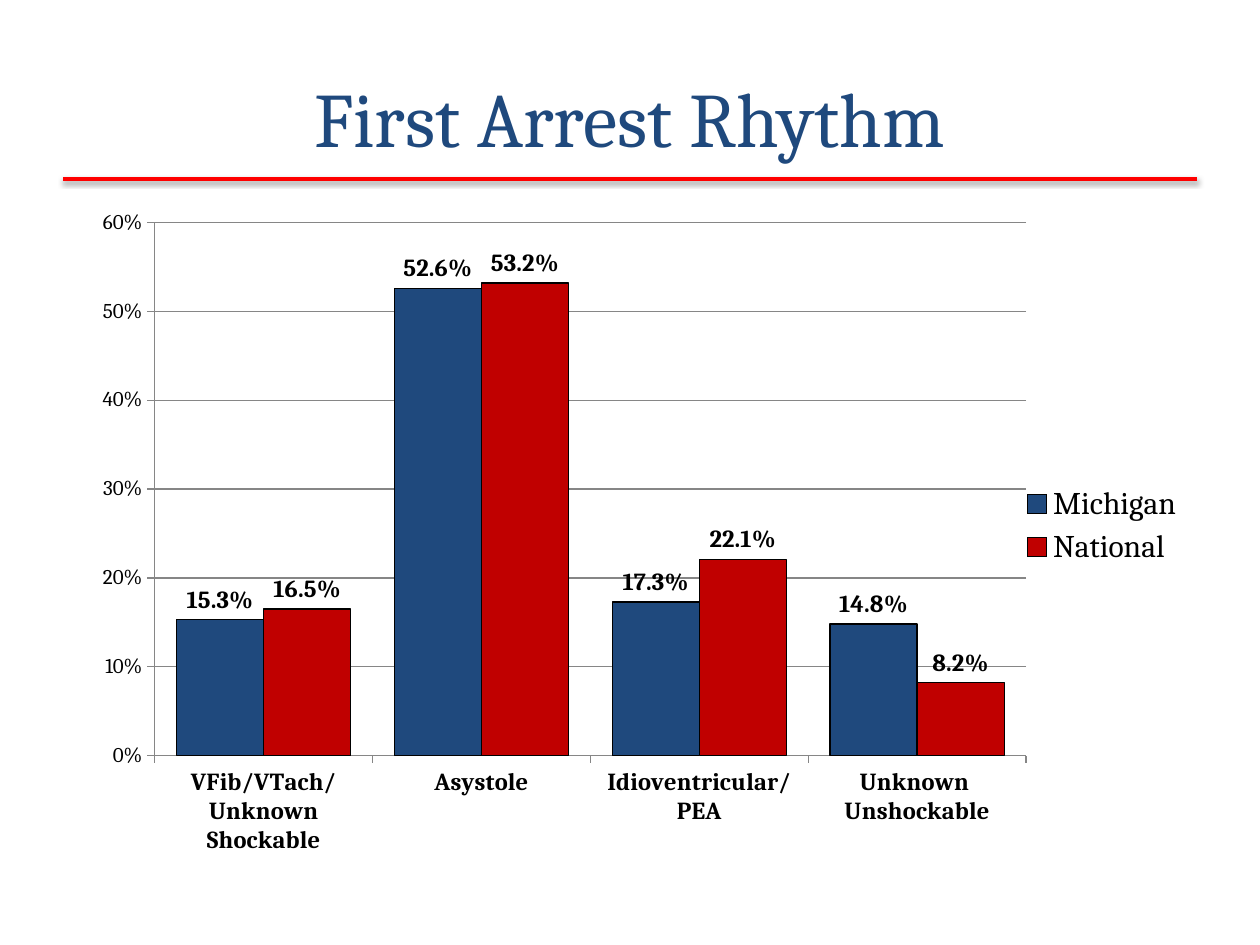
from dataclasses import dataclass

from pptx import Presentation
from pptx.chart.data import CategoryChartData
from pptx.dml.color import RGBColor
from pptx.enum.chart import XL_CHART_TYPE, XL_LABEL_POSITION, XL_LEGEND_POSITION, XL_TICK_MARK
from pptx.enum.shapes import MSO_CONNECTOR
from pptx.enum.text import MSO_ANCHOR, PP_ALIGN
from pptx.oxml import parse_xml
from pptx.oxml.ns import nsdecls, qn
from pptx.util import Pt


@dataclass(frozen=True)
class Theme:
    font: str = "Cambria"
    navy: RGBColor = RGBColor(0x1F, 0x49, 0x7D)
    crimson: RGBColor = RGBColor(0xC0, 0x00, 0x00)
    red: RGBColor = RGBColor(0xFF, 0x00, 0x00)
    black: RGBColor = RGBColor(0x00, 0x00, 0x00)
    gray: RGBColor = RGBColor(0x86, 0x86, 0x86)
    title_size: int = 44
    legend_size: int = 18
    label_size: int = 14
    scale_size: int = 12


THEME = Theme()
PIXELS_PER_INCH = 126
CATEGORIES = (
    "VFib/VTach/\nUnknown Shockable",
    "Asystole",
    "Idioventricular/\nPEA",
    "Unknown \nUnshockable",
)
SERIES = (
    ("Michigan", THEME.navy, (0.153, 0.526, 0.173, 0.148)),
    ("National", THEME.crimson, (0.165, 0.532, 0.221, 0.082)),
)
PLOT_AREA = {"x": 0.085, "y": 0.042, "w": 0.765, "h": 0.805}


def px(length):
    return round(length * 914400 / PIXELS_PER_INCH)


def set_font(font, size, color=THEME.black, bold=False):
    font.name = THEME.font
    font.size = Pt(size)
    font.bold = bold
    font.color.rgb = color


def set_line(line, color, width):
    line.color.rgb = color
    line.width = Pt(width)


def add_title(slide, text, left, top, width, height):
    shape = slide.shapes.add_textbox(px(left), px(top), px(width), px(height))
    frame = shape.text_frame
    frame.word_wrap = True
    frame.vertical_anchor = MSO_ANCHOR.MIDDLE
    paragraph = frame.paragraphs[0]
    paragraph.text = text
    paragraph.alignment = PP_ALIGN.CENTER
    set_font(paragraph.font, THEME.title_size, THEME.navy)


def add_rule(slide, left, right, y):
    connector = slide.shapes.add_connector(MSO_CONNECTOR.STRAIGHT, px(left), px(y), px(right), px(y))
    set_line(connector.line, THEME.red, 2)
    shadow = parse_xml(
        f'<a:effectLst {nsdecls("a")}>'
        f'<a:outerShdw blurRad="{Pt(3.1)}" dist="{Pt(1.6)}" dir="5400000" rotWithShape="0">'
        '<a:srgbClr val="000000"><a:alpha val="38000"/></a:srgbClr>'
        "</a:outerShdw></a:effectLst>"
    )
    connector.line._get_or_add_ln().addnext(shadow)


def place_plot_area(chart):
    plot_area = chart._chartSpace.chart.plotArea
    for layout in plot_area.findall(qn("c:layout")):
        plot_area.remove(layout)
    modes = "".join(f'<c:{axis}Mode val="edge"/>' for axis in "xy")
    sizes = "".join(f'<c:{name} val="{value}"/>' for name, value in PLOT_AREA.items())
    plot_area.insert(0, parse_xml(
        f'<c:layout {nsdecls("c")}><c:manualLayout><c:layoutTarget val="inner"/>'
        f"{modes}{sizes}</c:manualLayout></c:layout>"
    ))


def style_axis(axis, size, bold):
    axis.major_tick_mark = XL_TICK_MARK.OUTSIDE
    axis.minor_tick_mark = XL_TICK_MARK.NONE
    set_line(axis.format.line, THEME.gray, 0.75)
    set_font(axis.tick_labels.font, size, bold=bold)


def style_series(series, color):
    series.format.fill.solid()
    series.format.fill.fore_color.rgb = color
    set_line(series.format.line, THEME.black, 0.75)
    labels = series.data_labels
    labels.show_value = True
    labels.position = XL_LABEL_POSITION.OUTSIDE_END
    labels.number_format = "0.0%"
    labels.number_format_is_linked = False
    set_font(labels.font, THEME.label_size, bold=True)


def add_rhythm_chart(slide, left, top, width, height):
    data = CategoryChartData(number_format="0.0%")
    data.categories = CATEGORIES
    for name, _, values in SERIES:
        data.add_series(name, values)
    chart = slide.shapes.add_chart(
        XL_CHART_TYPE.COLUMN_CLUSTERED, px(left), px(top), px(width), px(height), data
    ).chart
    set_font(chart.font, THEME.legend_size)
    chart.has_title = False
    chart.has_legend = True
    chart.legend.position = XL_LEGEND_POSITION.RIGHT
    chart.legend.include_in_layout = False
    set_font(chart.legend.font, THEME.legend_size)

    style_axis(chart.category_axis, THEME.label_size, True)
    scale = chart.value_axis
    style_axis(scale, THEME.scale_size, False)
    scale.minimum_scale = 0
    scale.maximum_scale = 0.6
    scale.major_unit = 0.1
    scale.tick_labels.number_format = "0%"
    scale.tick_labels.number_format_is_linked = False
    scale.has_major_gridlines = True
    set_line(scale.major_gridlines.format.line, THEME.gray, 0.75)

    plot = chart.plots[0]
    plot.gap_width = 50
    plot.overlap = 0
    plot.vary_by_categories = False
    for series, (_, color, _) in zip(plot.series, SERIES):
        style_series(series, color)
    place_plot_area(chart)


def main():
    presentation = Presentation()
    presentation.slide_width = px(1260)
    presentation.slide_height = px(945)
    slide = presentation.slides.add_slide(presentation.slide_layouts[6])
    add_rule(slide, 63, 1197, 179)
    add_title(slide, "First Arrest Rhythm", 63, 38, 1134, 158)
    add_rhythm_chart(slide, 58, 195, 1139, 662)
    presentation.save("out.pptx")


if __name__ == "__main__":
    main()
